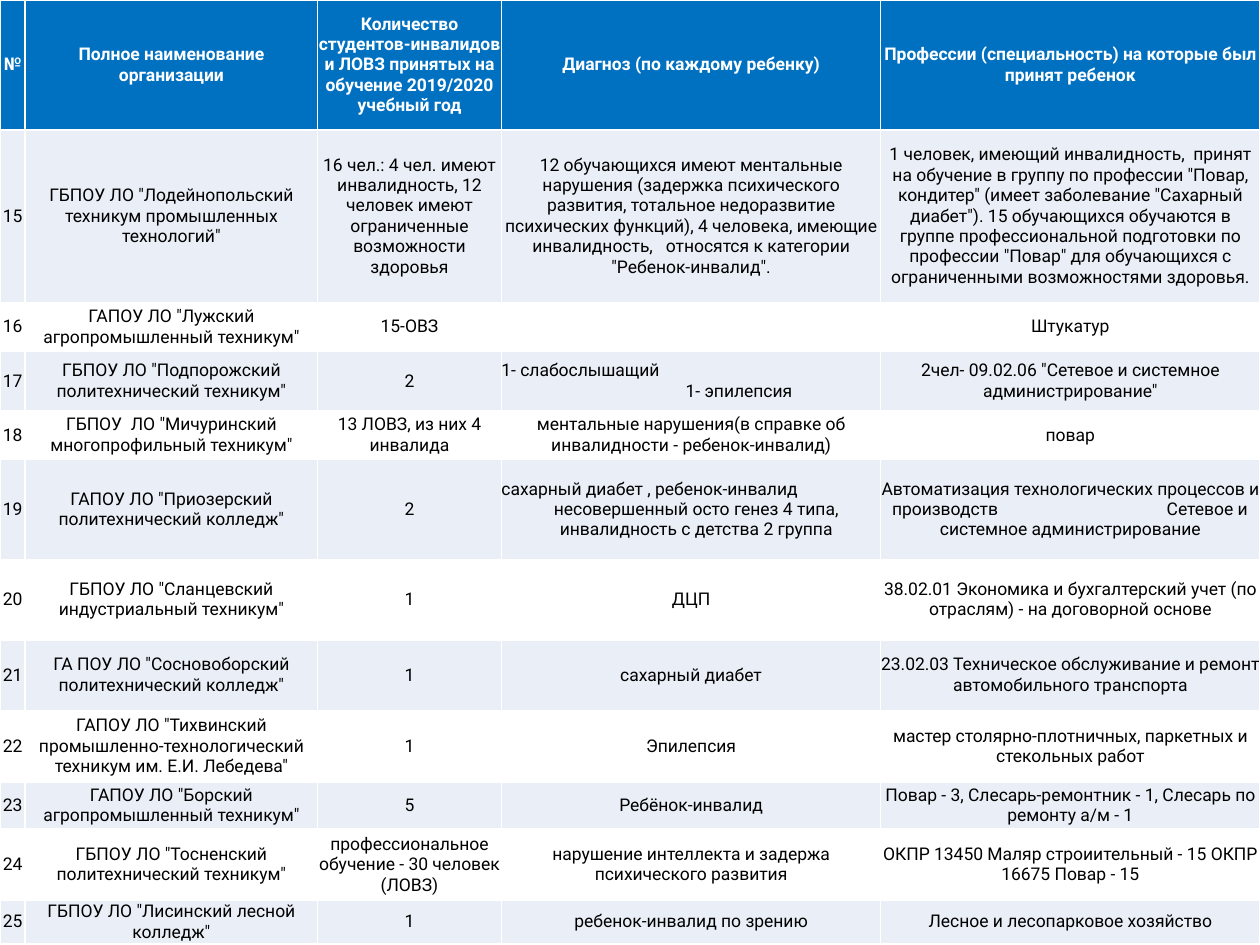
import lxml.etree
import pptx
import pptx.dml.color
import pptx.enum.text
import pptx.oxml.ns
import pptx.util

Inches = pptx.util.Inches
ALIGN = pptx.enum.text.PP_ALIGN

COLORS = {"header": "0070C0", "band": "EAEFF7", "plain": "FFFFFF",
          "border": "FFFFFF", "header_text": "FFFFFF", "text": "000000"}
FONT = "Roboto"

COLUMN_WIDTHS = [0.2, 2.32, 1.46, 3.01, 3.01]
ROW_HEIGHTS = [1.03, 1.37, 0.39, 0.47, 0.39, 0.79, 0.64, 0.56, 0.57, 0.37, 0.57, 0.34]
FIRST_NUMBER = 15

HEADERS = [
    "№",
    "Полное наименование организации",
    "Количество студентов-инвалидов и ЛОВЗ принятых на обучение 2019/2020 учебный год",
    "Диагноз (по каждому ребенку)",
    "Профессии (специальность) на которые был принят ребенок",
]

# Organization, number of students, diagnosis, profession
COLLEGES = [
    ('ГБПОУ ЛО "Лодейнопольский техникум промышленных технологий"',
     "16 чел.: 4 чел. имеют инвалидность, 12 человек имеют ограниченные "
     "возможности здоровья",
     "12 обучающихся имеют ментальные нарушения (задержка психического развития, "
     "тотальное недоразвитие психических функций), 4 человека, имеющие "
     'инвалидность,   относятся к категории "Ребенок-инвалид".',
     "1 человек, имеющий инвалидность,  принят на обучение в группу по профессии "
     '"Повар, кондитер" (имеет заболевание "Сахарный диабет"). 15 обучающихся '
     'обучаются в группе профессиональной подготовки по профессии "Повар" для '
     "обучающихся с ограниченными возможностями здоровья."),
    ('ГАПОУ ЛО "Лужский агропромышленный техникум"', "15-ОВЗ", "", "Штукатур"),
    ('ГБПОУ ЛО "Подпорожский политехнический техникум"', "2",
     "1- слабослышащий\n1- эпилепсия",
     '2чел- 09.02.06 "Сетевое и системное администрирование"'),
    ('ГБПОУ  ЛО "Мичуринский многопрофильный техникум"',
     "13 ЛОВЗ, из них 4 инвалида",
     "ментальные нарушения(в справке об инвалидности - ребенок-инвалид)", "повар"),
    ('ГАПОУ ЛО "Приозерский политехнический колледж"', "2",
     "сахарный диабет , ребенок-инвалид\n"
     "несовершенный осто генез 4 типа, инвалидность с детства 2 группа",
     "Автоматизация технологических процессов и\nпроизводств\tСетевое и\n"
     "системное администрирование"),
    ('ГБПОУ ЛО "Сланцевский индустриальный техникум"', "1", "ДЦП",
     "38.02.01 Экономика и бухгалтерский учет (по отраслям) - на договорной основе"),
    ('ГА ПОУ ЛО "Сосновоборский политехнический колледж"', "1", "сахарный диабет",
     "23.02.03 Техническое обслуживание и ремонт автомобильного транспорта"),
    ('ГАПОУ ЛО "Тихвинский промышленно-технологический техникум им. Е.И. Лебедева"',
     "1", "Эпилепсия", "мастер столярно-плотничных, паркетных и стекольных работ"),
    ('ГАПОУ ЛО "Борский агропромышленный техникум"', "5", "Ребёнок-инвалид",
     "Повар - 3, Слесарь-ремонтник - 1, Слесарь по ремонту а/м - 1"),
    ('ГБПОУ ЛО "Тосненский политехнический техникум"',
     "профессиональное обучение - 30 человек (ЛОВЗ)",
     "нарушение интеллекта и задержа психического развития",
     "ОКПР 13450 Маляр строиительный - 15 ОКПР 16675 Повар - 15"),
    ('ГБПОУ ЛО "Лисинский лесной колледж"', "1", "ребенок-инвалид по зрению",
     "Лесное и лесопарковое хозяйство"),
]


def rgb(name):
    return pptx.dml.color.RGBColor.from_string(COLORS[name])


def add_borders(cell):
    properties = cell._tc.get_or_add_tcPr()
    qn = pptx.oxml.ns.qn
    for side in ("lnL", "lnR", "lnT", "lnB"):
        line = lxml.etree.SubElement(properties, qn(f"a:{side}"), w=str(pptx.util.Pt(1)))
        fill = lxml.etree.SubElement(line, qn("a:solidFill"))
        lxml.etree.SubElement(fill, qn("a:srgbClr"), val=COLORS["border"])


def format_cell(cell, text, fill, color, bold):
    add_borders(cell)
    cell.fill.solid()
    cell.fill.fore_color.rgb = rgb(fill)
    cell.margin_left = cell.margin_right = cell.margin_top = cell.margin_bottom = 0
    cell.vertical_anchor = pptx.enum.text.MSO_ANCHOR.MIDDLE
    cell.text = text
    for para in cell.text_frame.paragraphs:
        para.alignment = ALIGN.CENTER
        para.font.name = FONT
        para.font.size = pptx.util.Pt(10)
        para.font.bold = bold
        para.font.color.rgb = rgb(color)


def indent(para, left, tab=None):
    """Set the left margin and, if given, one tab stop."""
    properties = para._p.get_or_add_pPr()
    properties.set("marL", str(Inches(left)))
    if tab is not None:
        qn = pptx.oxml.ns.qn
        stops = lxml.etree.Element(qn("a:tabLst"))
        lxml.etree.SubElement(stops, qn("a:tab"), pos=str(Inches(tab)), algn="l")
        properties.find(qn("a:defRPr")).addprevious(stops)


def align_split_lines(table):
    """Place the lines of the cells that list several items."""
    hearing, epilepsy = table.cell(3, 3).text_frame.paragraphs
    hearing.alignment = ALIGN.LEFT
    indent(epilepsy, 0.76)
    diabetes, bones = table.cell(5, 3).text_frame.paragraphs
    diabetes.alignment = ALIGN.LEFT
    indent(bones, 0.08)
    production = table.cell(5, 4).text_frame.paragraphs[1]
    production.alignment = ALIGN.LEFT
    indent(production, 0.09, tab=2.18)


def add_college_table(page, left, top, width, height):
    rows = [HEADERS]
    rows += [(str(number), *college)
             for number, college in enumerate(COLLEGES, FIRST_NUMBER)]
    table = page.shapes.add_table(len(rows), len(HEADERS), left, top, width, height).table
    for column, size in zip(table.columns, COLUMN_WIDTHS):
        column.width = Inches(size)
    for row, size in zip(table.rows, ROW_HEIGHTS):
        row.height = Inches(size)
    for index, texts in enumerate(rows):
        header = index == 0
        fill = "header" if header else "band" if index % 2 else "plain"
        color = "header_text" if header else "text"
        for cell, text in zip(table.rows[index].cells, texts):
            format_cell(cell, text, fill, color, header)
    align_split_lines(table)


def main():
    deck = pptx.Presentation()
    deck.slide_width, deck.slide_height = Inches(10), Inches(7.5)
    page = deck.slides.add_slide(deck.slide_layouts[6])
    add_college_table(page, 0, 0, deck.slide_width, deck.slide_height)
    deck.save("out.pptx")


if __name__ == "__main__":
    main()
